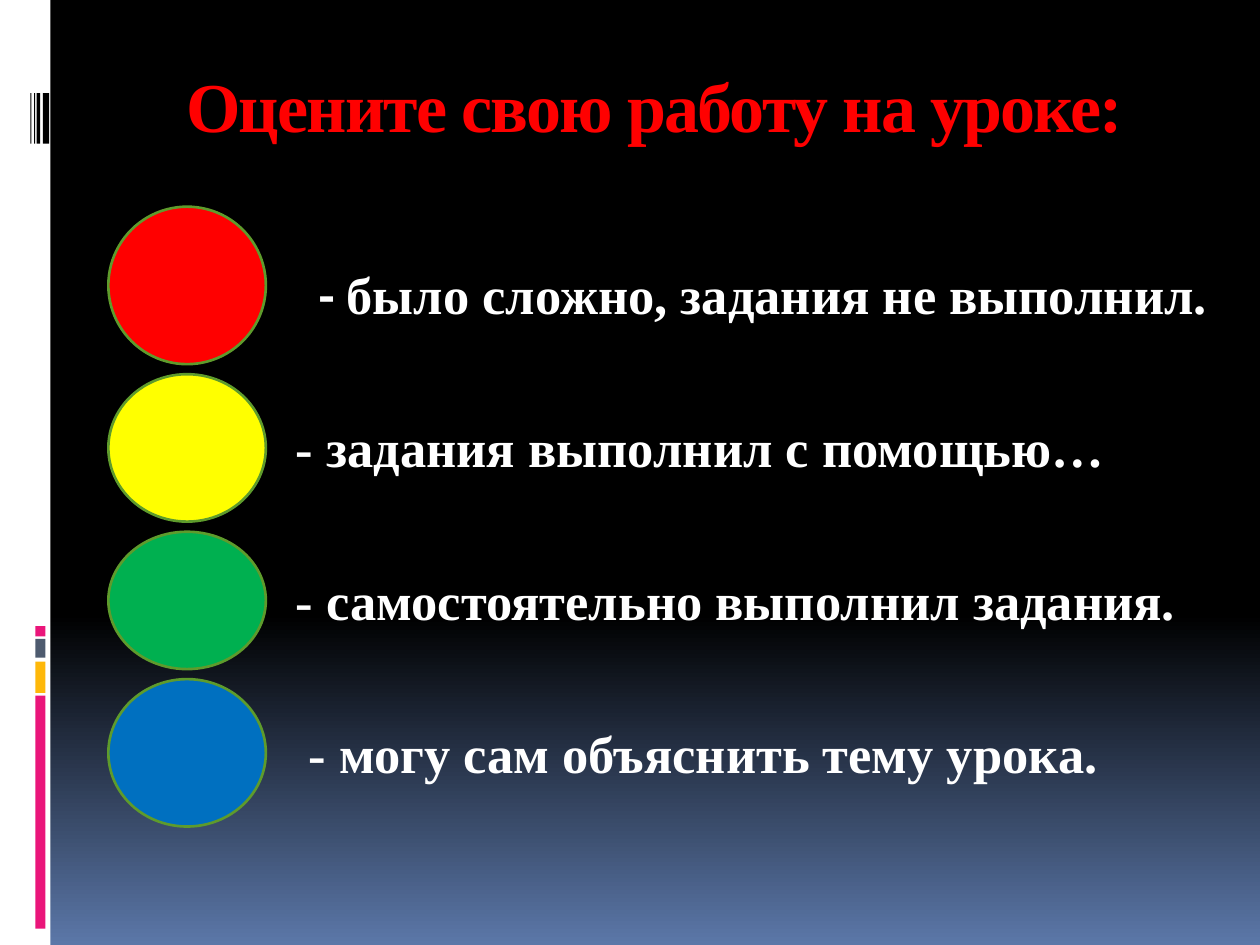
from copy import deepcopy
from typing import NamedTuple

from pptx import Presentation
from pptx.dml.color import RGBColor
from pptx.enum.shapes import MSO_SHAPE
from pptx.util import Inches, Pt

WHITE = RGBColor(0xFF, 0xFF, 0xFF)
BLACK = RGBColor(0x00, 0x00, 0x00)
DUSK_BLUE = RGBColor(0x5B, 0x77, 0xA8)
PINK = RGBColor(0xEA, 0x15, 0x7A)
AMBER = RGBColor(0xFE, 0xB8, 0x0A)
SLATE = RGBColor(0x4E, 0x5B, 0x6F)
RED = RGBColor(0xFF, 0x00, 0x00)
YELLOW = RGBColor(0xFF, 0xFF, 0x00)
GREEN = RGBColor(0x00, 0xB0, 0x50)
BLUE = RGBColor(0x00, 0x70, 0xC0)
OUTLINE_GREEN = RGBColor(0x5E, 0x9B, 0x2C)

SERIF = "Times New Roman"
TITLE_FORMAT = {"name": SERIF, "size": Pt(40), "bold": True}
RATING_FORMAT = {"name": SERIF, "size": Pt(30), "bold": True}
DASH_FORMAT = RATING_FORMAT | {"name": "Calibri"}


class Block(NamedTuple):
    left: float
    top: float
    width: float
    height: float
    color: RGBColor


class Rating(NamedTuple):
    text: str
    indent: float
    top: float
    height: float
    color: RGBColor
    dash_format: dict


SIDEBAR = [
    Block(0, 0, 0.4, 7.5, WHITE),
    Block(0.28, 5.52, 0.08, 1.85, PINK),
    Block(0.28, 5.25, 0.08, 0.25, AMBER),
    Block(0.28, 5.07, 0.08, 0.15, SLATE),
    Block(0.28, 4.97, 0.08, 0.08, PINK),
] + [
    Block(left, 0.74, width, 0.4, BLACK)
    for left, width in [(0.34, 0.05), (0.29, 0.03), (0.27, 0.01), (0.24, 0.01)]
]

RATINGS = [
    Rating("было сложно, задания не выполнил.", 2.04, 1.64, 1.25, RED, DASH_FORMAT),
    Rating("задания выполнил с помощью…", 1.86, 2.97, 1.17, YELLOW, RATING_FORMAT),
    Rating("самостоятельно выполнил задания.", 1.86, 4.22, 1.09, GREEN, RATING_FORMAT),
    Rating("могу сам объяснить тему урока.", 1.96, 5.39, 1.17, BLUE, RATING_FORMAT),
]


def paint_background(slide) -> None:
    """Black down to 65 %, then fading into blue at the bottom."""
    fill = slide.background.fill
    fill.gradient()
    fill.gradient_angle = 270
    stop_list = fill._fill._gradFill.gsLst
    stop_list.insert(1, deepcopy(stop_list[0]))
    stops = [(0, BLACK), (0.65, BLACK), (1, DUSK_BLUE)]
    for stop, (position, color) in zip(fill.gradient_stops, stops):
        stop.position = position
        stop.color.rgb = color


def add_block(slide, preset: MSO_SHAPE, block: Block):
    shape = slide.shapes.add_shape(preset, *map(Inches, block[:4]))
    shape.shadow.inherit = False
    shape.fill.solid()
    shape.fill.fore_color.rgb = block.color
    shape.line.fill.background()
    return shape


def add_circle(slide, rating: Rating) -> None:
    block = Block(0.86, rating.top, 1.25, rating.height, rating.color)
    circle = add_block(slide, MSO_SHAPE.OVAL, block)
    circle.line.color.rgb = OUTLINE_GREEN
    circle.line.width = Pt(1.5)


def add_text_frame(slide, left: float, top: float, width: float, height: float,
                   inset_top: float):
    frame = slide.shapes.add_textbox(*map(Inches, (left, top, width, height))).text_frame
    frame.word_wrap = True
    frame.margin_top = Inches(inset_top)
    return frame


def add_run(paragraph, text: str, formats: dict, color: RGBColor):
    run = paragraph.add_run()
    run.text = text
    for attribute, value in formats.items():
        setattr(run.font, attribute, value)
    run.font.color.rgb = color
    return run


def indent(paragraph, inches: float) -> None:
    properties = paragraph._p.get_or_add_pPr()
    properties.set("marL", str(Inches(inches)))
    properties.set("indent", "0")


def add_title(slide) -> None:
    heading = add_text_frame(slide, 1, 0.39, 8.69, 1.17, 0.11).paragraphs[0]
    indent(heading, 0.38)
    run = add_run(heading, "Оцените свою работу на уроке:", TITLE_FORMAT, RED)
    run.font._element.set("spc", "-100")


def add_ratings(slide) -> None:
    frame = add_text_frame(slide, 0.39, 1.41, 9.61, 5.86, 0.67)
    for number, rating in enumerate(RATINGS):
        line = frame.add_paragraph() if number else frame.paragraphs[0]
        indent(line, rating.indent)
        line.space_after = Pt(51.5)
        add_run(line, "- ", rating.dash_format, WHITE)
        add_run(line, rating.text, RATING_FORMAT, WHITE)
    for rating in RATINGS:
        add_circle(slide, rating)


def main() -> None:
    presentation = Presentation()
    presentation.slide_width = Inches(10)
    presentation.slide_height = Inches(7.5)
    slide = presentation.slides.add_slide(presentation.slide_layouts[6])
    paint_background(slide)
    for block in SIDEBAR:
        add_block(slide, MSO_SHAPE.RECTANGLE, block)
    add_title(slide)
    add_ratings(slide)
    presentation.save("out.pptx")


if __name__ == "__main__":
    main()
